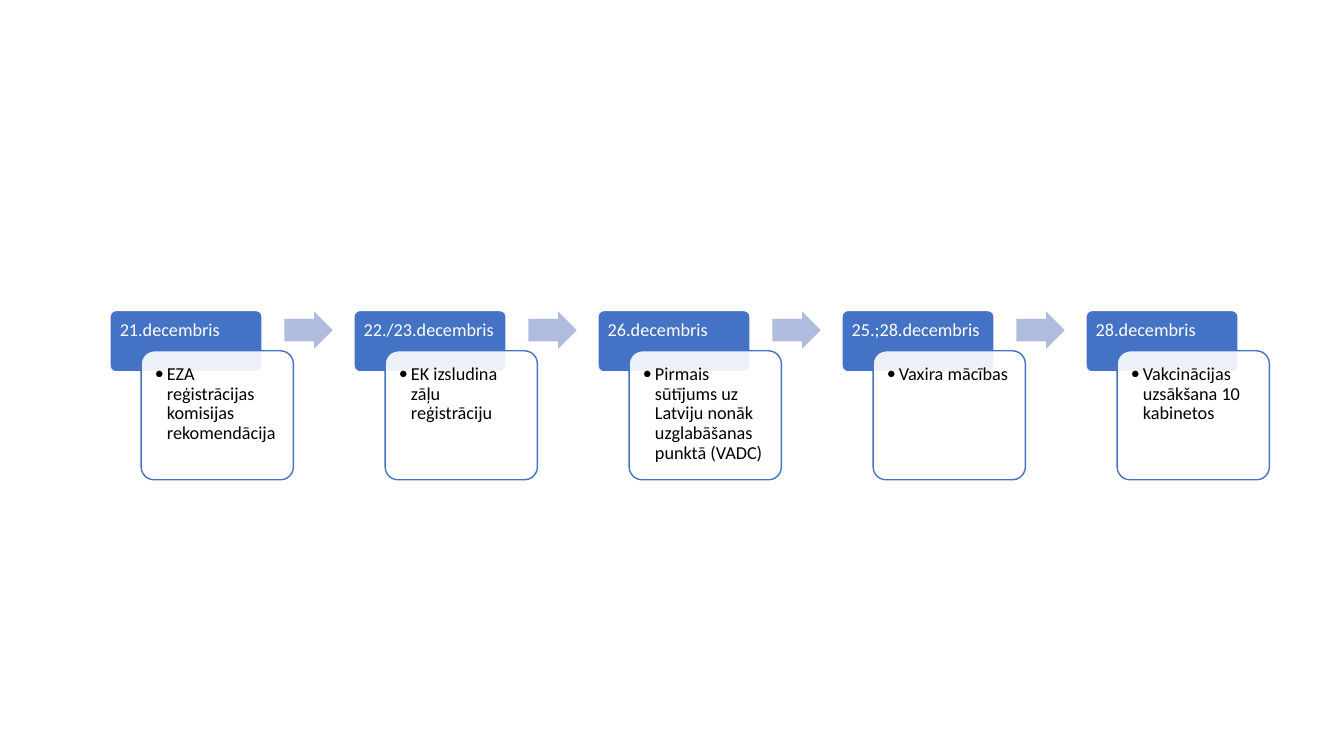
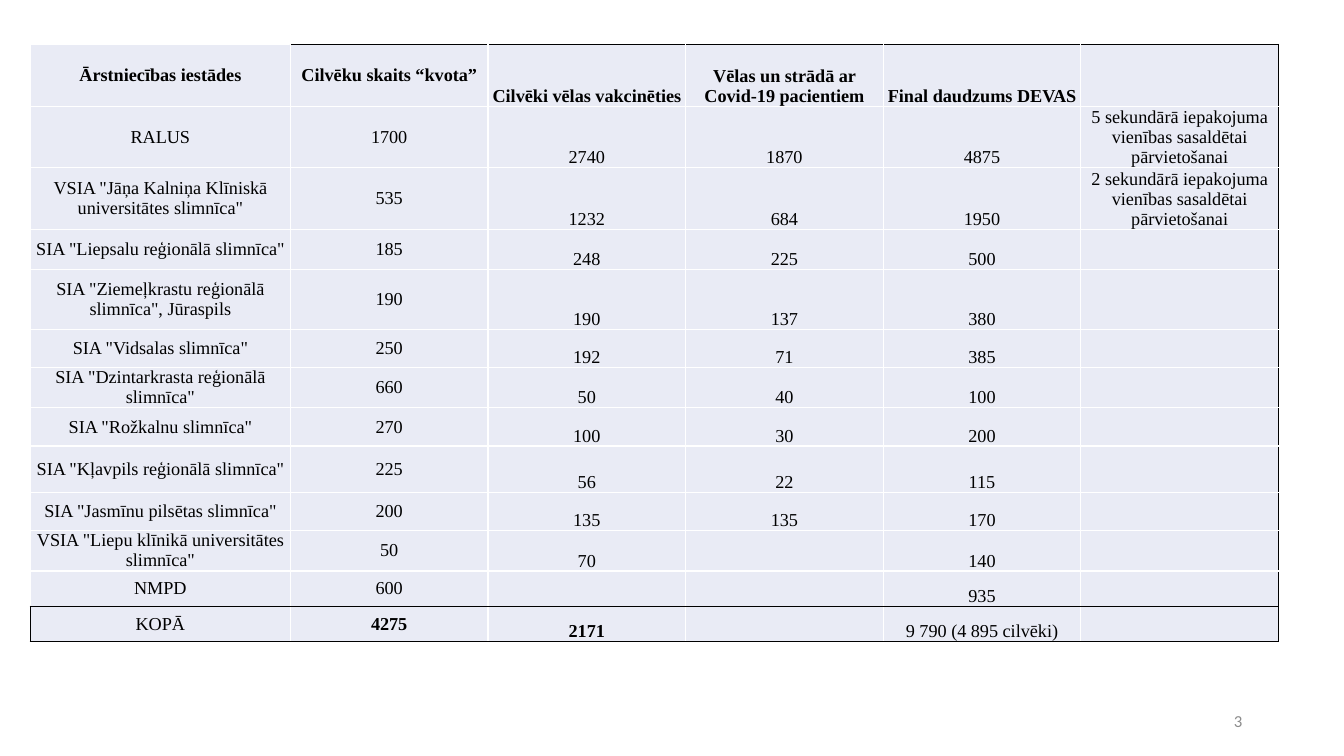
from lxml.etree import SubElement
from pptx import Presentation
from pptx.dml.color import RGBColor
from pptx.enum.shapes import MSO_SHAPE
from pptx.enum.text import MSO_ANCHOR, PP_ALIGN
from pptx.oxml.ns import qn
from pptx.util import Inches, Pt

COLORS = {
    "blue": "4472C4", "arrow": "B0BCDE", "cell": "E9EBF5",
    "white": "FFFFFF", "black": "000000", "gray": "8C8C8C",
}


def add_run(paragraph, text, size, font, color, bold=False):
    run = paragraph.add_run()
    run.text = text
    run.font.size = Pt(size)
    run.font.name = font
    run.font.bold = bold
    run.font.color.rgb = RGBColor.from_string(COLORS[color])


def add_block(slide, kind, box, adjustments, fill, line=None, inset=0.1):
    block = slide.shapes.add_shape(kind, *(Inches(length) for length in box))
    block.shadow.inherit = False
    for index, value in enumerate(adjustments):
        block.adjustments[index] = value
    block.fill.solid()
    block.fill.fore_color.rgb = RGBColor.from_string(COLORS[fill])
    if line:
        block.line.color.rgb = RGBColor.from_string(COLORS[line])
        block.line.width = Pt(1)
    else:
        block.line.fill.background()
    frame = block.text_frame
    frame.word_wrap = True
    frame.vertical_anchor = MSO_ANCHOR.TOP
    frame.margin_left = frame.margin_right = Inches(inset)
    frame.margin_top = frame.margin_bottom = Inches(inset)
    frame.paragraphs[0].alignment = PP_ALIGN.LEFT
    frame.paragraphs[0].line_spacing = 0.9
    return block


prs = Presentation()
prs.slide_width, prs.slide_height = Inches(13.33), Inches(7.5)
blank = prs.slide_layouts[6]

# Timeline: date, card and arrow in each column
timeline = prs.slides.add_slide(blank)
steps = [
    ("21.decembris", "EZA reģistrācijas komisijas rekomendācija"),
    ("22./23.decembris", "EK izsludina zāļu reģistrāciju"),
    ("26.decembris", "Pirmais sūtījums uz Latviju nonāk uzglabāšanas punktā (VADC)"),
    ("25.;28.decembris", "Vaxira mācības"),
    ("28.decembris", "Vakcinācijas uzsākšana 10 kabinetos"),
]
first_left, step_pitch, step_width = 1.09, 2.42, 1.51

for column, (date, event) in enumerate(steps):
    left = first_left + column * step_pitch
    date_block = add_block(timeline, MSO_SHAPE.ROUNDED_RECTANGLE,
                           (left, 3.08, step_width, 0.61), [0.1], "blue", "white", 0.08)
    add_run(date_block.text_frame.paragraphs[0], date, 13, "Calibri", "white")

    card = add_block(timeline, MSO_SHAPE.ROUNDED_RECTANGLE,
                     (left + 0.31, 3.48, step_width, 1.28), [0.1], "white", "blue")
    card_color = card.fill._xPr.find(qn("a:solidFill"))[0]
    SubElement(card_color, qn("a:alpha"), val="90000")
    event_line = card.text_frame.paragraphs[0]
    bullet = event_line._p.get_or_add_pPr()
    bullet.set("marL", str(Inches(0.12)))
    bullet.set("indent", str(-Inches(0.12)))
    SubElement(bullet, qn("a:buFont"), typeface="Calibri")
    SubElement(bullet, qn("a:buChar"), char="•")
    add_run(event_line, event, 13, "Calibri", "black")

    if column < len(steps) - 1:
        add_block(timeline, MSO_SHAPE.RIGHT_ARROW,
                  (left + 1.73, 3.09, 0.48, 0.37), [0.6, 0.5], "arrow")

# Quota table
quotas = prs.slides.add_slide(blank)
rows = [
    ("Ārstniecības iestādes", "Cilvēku skaits “kvota”", "Cilvēki vēlas vakcinēties",
     "Vēlas un strādā ar Covid-19 pacientiem", "Final daudzums DEVAS", ""),
    ("RALUS", "1700", "2740", "1870", "4875",
     "5 sekundārā iepakojuma vienības sasaldētai pārvietošanai"),
    ('VSIA "Jāņa Kalniņa Klīniskā universitātes slimnīca"', "535", "1232", "684", "1950",
     "2 sekundārā iepakojuma vienības sasaldētai pārvietošanai"),
    ('SIA "Liepsalu reģionālā slimnīca"', "185", "248", "225", "500", ""),
    ('SIA "Ziemeļkrastu reģionālā slimnīca", Jūraspils', "190", "190", "137", "380", ""),
    ('SIA "Vidsalas slimnīca"', "250", "192", "71", "385", ""),
    ('SIA "Dzintarkrasta reģionālā slimnīca"', "660", "50", "40", "100", ""),
    ('SIA "Rožkalnu slimnīca"', "270", "100", "30", "200", ""),
    ('SIA "Kļavpils reģionālā slimnīca"', "225", "56", "22", "115", ""),
    ('SIA "Jasmīnu pilsētas slimnīca"', "200", "135", "135", "170", ""),
    ('VSIA "Liepu klīnikā universitātes slimnīca"', "50", "70", "", "140", ""),
    ("NMPD", "600", "", "", "935", ""),
    ("KOPĀ", "4275", "2171", "", "9 790 (4 895 cilvēki)", ""),
]
column_widths = [2.58] + [1.96] * 5
row_heights = [0.62, 0.6, 0.61, 0.4, 0.59, 0.38, 0.4, 0.38, 0.46, 0.38, 0.4, 0.35, 0.35]
last_row, last_column = len(rows) - 1, len(column_widths) - 1

quota_table = quotas.shapes.add_table(
    len(rows), len(column_widths), Inches(0.3), Inches(0.44),
    Inches(sum(column_widths)), Inches(sum(row_heights))).table
quota_table.first_row = quota_table.horz_banding = False
for column, width in enumerate(column_widths):
    quota_table.columns[column].width = Inches(width)

for row, values in enumerate(rows):
    quota_table.rows[row].height = Inches(row_heights[row])
    for column, value in enumerate(values):
        cell = quota_table.cell(row, column)
        side_margin = 0 if column < 2 else 0.01
        cell.margin_left = cell.margin_right = cell.margin_top = Inches(side_margin)
        cell.margin_bottom = 0
        cell.vertical_anchor = MSO_ANCHOR.MIDDLE if column < 2 else MSO_ANCHOR.BOTTOM

        # Black outer edges and total row, white inner grid
        black_edges = {
            "L": row == last_row and column == 0,
            "R": column == last_column,
            "T": row == last_row or (row == 0 and column > 0),
            "B": row >= last_row - 1,
        }
        properties = cell._tc.get_or_add_tcPr()
        for side, is_black in black_edges.items():
            edge = SubElement(properties, qn("a:ln" + side), w=str(Pt(1)))
            edge_fill = SubElement(edge, qn("a:solidFill"))
            SubElement(edge_fill, qn("a:srgbClr"),
                       val=COLORS["black" if is_black else "white"])
        cell.fill.solid()
        cell.fill.fore_color.rgb = RGBColor.from_string(COLORS["cell"])

        if value:
            is_bold = row == 0 or (row == last_row and column in (1, 2))
            paragraph = cell.text_frame.paragraphs[0]
            paragraph.alignment = PP_ALIGN.CENTER
            add_run(paragraph, value, 13, "Times New Roman", "black", is_bold)

# Page number
page_number = quotas.shapes.add_textbox(
    Inches(9.42), Inches(6.95), Inches(3), Inches(0.4)).text_frame
page_number.word_wrap = True
page_number.vertical_anchor = MSO_ANCHOR.MIDDLE
page_number.paragraphs[0].alignment = PP_ALIGN.RIGHT
add_run(page_number.paragraphs[0], "3", 12, "Calibri", "gray")

prs.save("out.pptx")
